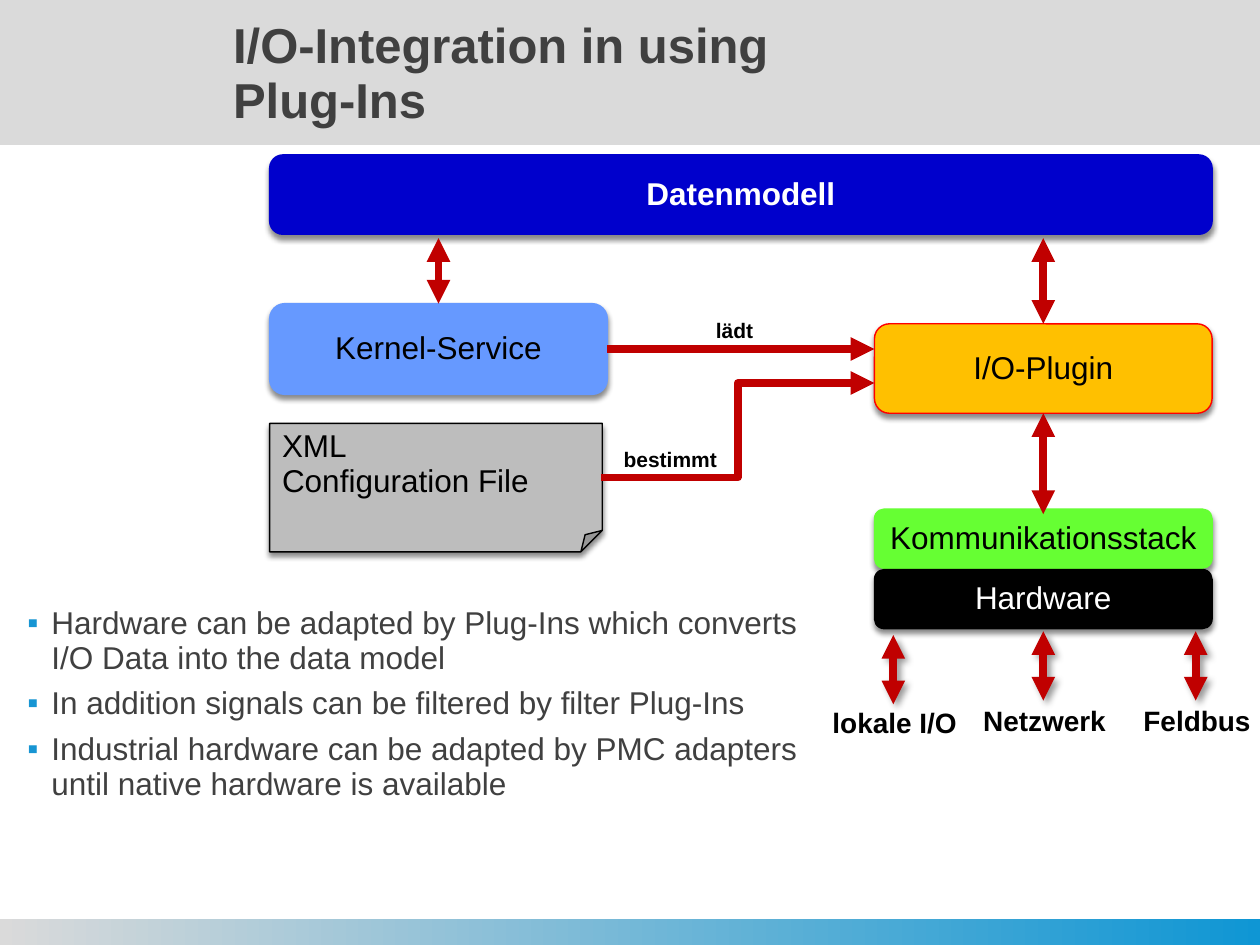
from dataclasses import dataclass

from lxml import etree
from pptx import Presentation
from pptx.dml.color import RGBColor
from pptx.enum.shapes import MSO_CONNECTOR, MSO_SHAPE
from pptx.enum.text import MSO_ANCHOR, MSO_AUTO_SIZE, PP_ALIGN
from pptx.oxml.ns import qn
from pptx.util import Emu, Pt

RECTANGLE = MSO_SHAPE.RECTANGLE
ROUNDED = MSO_SHAPE.ROUNDED_RECTANGLE
FOLDED = MSO_SHAPE.FOLDED_CORNER
STRAIGHT, ELBOW = MSO_CONNECTOR.STRAIGHT, MSO_CONNECTOR.ELBOW
TOP, MIDDLE = MSO_ANCHOR.TOP, MSO_ANCHOR.MIDDLE
LEFT, CENTER = PP_ALIGN.LEFT, PP_ALIGN.CENTER
FIT_SHAPE = MSO_AUTO_SIZE.SHAPE_TO_FIT_TEXT
TOP_SIDE, BOTTOM_SIDE, RIGHT_SIDE = 0, 2, 3
EMU_PER_PX = 9144


def px(value):
    return Emu(value * EMU_PER_PX)


@dataclass(frozen=True)
class Theme:
    font: str = "Arial"
    band: str = "DADADA"
    accent: str = "0F96D4"
    bullet: str = "1795D3"
    text: str = "404040"
    black: str = "000000"
    white: str = "FFFFFF"
    arrow: str = "C00000"
    model: str = "0000CC"
    service: str = "6699FF"
    plugin: str = "FFC000"
    plugin_edge: str = "FF0000"
    note: str = "BDBDBD"
    stack: str = "66FF33"
    title_size: int = 28
    body_size: int = 18
    label_size: int = 16
    caption_size: int = 12
    edge_width: float = 0.79
    arrow_width: float = 4.5
    line_spacing: float = 0.93
    box_shadow: tuple = (45, 3, 2.4, 90)
    arrow_shadow: tuple = (40, 4, 3, 45)


class SlideBuilder:
    def __init__(self, page, theme):
        self.page = page
        self.theme = theme

    def style_text(self, frame, text, size, color, bold=False, align=CENTER, anchor=TOP):
        frame.text = text
        frame.vertical_anchor = anchor
        for paragraph in frame.paragraphs:
            paragraph.alignment = align
            paragraph.line_spacing = self.theme.line_spacing
            for span in paragraph.runs:
                span.font.name = self.theme.font
                span.font.size = Pt(size)
                span.font.bold = bold
                span.font.color.rgb = RGBColor.from_string(color)

    def set_effect(self, shape, shadow=None):
        effects = etree.SubElement(shape._element.spPr, qn("a:effectLst"))
        if shadow:
            alpha, blur, distance, angle = shadow
            outer = etree.SubElement(
                effects, qn("a:outerShdw"), blurRad=str(Pt(blur)), dist=str(Pt(distance)),
                dir=str(angle * 60000), algn="ctr", rotWithShape="0")
            color = etree.SubElement(outer, qn("a:srgbClr"), val=self.theme.black)
            etree.SubElement(color, qn("a:alpha"), val=str(alpha * 1000))

    def band(self, top, height, gradient_end=None):
        shape = self.page.shapes.add_shape(RECTANGLE, 0, px(top), px(1000), px(height))
        if gradient_end:
            shape.fill.gradient()
            shape.fill.gradient_angle = 0
            for stop, color in zip(shape.fill.gradient_stops, (self.theme.band, gradient_end)):
                stop.color.rgb = RGBColor.from_string(color)
        else:
            shape.fill.solid()
            shape.fill.fore_color.rgb = RGBColor.from_string(self.theme.band)
        shape.line.fill.background()
        self.set_effect(shape)

    def block(self, bounds, text, fill, edge=None, color=None, bold=False,
              kind=ROUNDED, align=CENTER, anchor=MIDDLE):
        shape = self.page.shapes.add_shape(kind, *map(px, bounds))
        shape.fill.solid()
        shape.fill.fore_color.rgb = RGBColor.from_string(fill)
        shape.line.color.rgb = RGBColor.from_string(edge or fill)
        shape.line.width = Pt(self.theme.edge_width)
        self.set_effect(shape, self.theme.box_shadow)
        self.style_text(shape.text_frame, text, self.theme.body_size,
                        color or self.theme.black, bold, align, anchor)
        shape.text_frame.word_wrap = align == LEFT
        return shape

    def text_box(self, bounds, text, size, color, bold=False, align=CENTER, anchor=TOP):
        box = self.page.shapes.add_textbox(*map(px, bounds))
        frame = box.text_frame
        frame.word_wrap = True
        self.style_text(frame, text, size, color, bold, align, anchor)
        return frame

    def label(self, bounds, text, size):
        frame = self.text_box(bounds, text, size, self.theme.black, bold=True)
        frame.auto_size = FIT_SHAPE

    def bullets(self, bounds, items):
        frame = self.text_box(bounds, "\n".join(items), self.theme.body_size,
                              self.theme.text, align=LEFT)
        for index, paragraph in enumerate(frame.paragraphs):
            if index:
                paragraph.space_before = Pt(6)
            properties = paragraph._p.get_or_add_pPr()
            properties.set("marL", str(px(19)))
            properties.set("indent", str(px(-19)))
            color = etree.SubElement(properties, qn("a:buClr"))
            etree.SubElement(color, qn("a:srgbClr"), val=self.theme.bullet)
            etree.SubElement(properties, qn("a:buFont"), typeface=self.theme.font)
            etree.SubElement(properties, qn("a:buChar"), char="▪")

    def arrow(self, start, end, source=None, side=None, kind=STRAIGHT,
              both=True, shadow=None):
        line = self.page.shapes.add_connector(kind, *map(px, start + end))
        if source:
            line.begin_connect(source, side)
        line.line.color.rgb = RGBColor.from_string(self.theme.arrow)
        line.line.width = Pt(self.theme.arrow_width)
        outline = line.line._get_or_add_ln()
        for tag in ("a:headEnd", "a:tailEnd") if both else ("a:tailEnd",):
            etree.SubElement(outline, qn(tag), type="triangle")
        self.set_effect(line, shadow)


def main():
    theme = Theme()
    deck = Presentation()
    deck.slide_width, deck.slide_height = px(1000), px(750)
    page = deck.slides.add_slide(deck.slide_layouts[6])
    slide = SlideBuilder(page, theme)

    slide.band(0, 115)
    slide.band(729, 21, theme.accent)
    title = slide.text_box((177, 8, 661, 103), "I/O-Integration in using\vPlug-Ins",
                           theme.title_size, theme.text, True, LEFT, MIDDLE)
    title.margin_left = px(8)

    left, right, width = 214, 694, 268
    service_x, plugin_x = left + width // 2, right + width // 2
    slide.block((right, 404, width, 47), "Kommunikationsstack", theme.stack)
    slide.block((left, 123, right + width - left, 63), "Datenmodell", theme.model,
                color=theme.white, bold=True)
    plugin = slide.block((right, 257, width, 71), "I/O-Plugin", theme.plugin, theme.plugin_edge)
    slide.block((left, 336, 264, 102), "XML\nConfiguration File", theme.note, theme.black,
                kind=FOLDED, align=LEFT, anchor=TOP)
    service = slide.block((left, 241, width, 72), "Kernel-Service", theme.service)
    slide.block((right, 452, width, 47), "Hardware", theme.black, color=theme.white)

    ports = (("lokale I/O", 709, 504, (647, 557, 126, 35)),
             ("Netzwerk", plugin_x, 501, (767, 556, 124, 35)),
             ("Feldbus", 949, 501, (896, 556, 108, 35)))
    for name, x, top, bounds in ports:
        slide.arrow((x, top + 55), (x, top), shadow=theme.arrow_shadow)
        slide.label(bounds, name, theme.label_size)

    slide.arrow((service_x, 241), (service_x, 189), service, TOP_SIDE)
    slide.arrow((plugin_x, 257), (plugin_x, 189), plugin, TOP_SIDE)
    slide.arrow((plugin_x, 328), (plugin_x, 408), plugin, BOTTOM_SIDE)
    slide.arrow((left + width, 277), (right, 277), service, RIGHT_SIDE, both=False)
    slide.arrow((477, 379), (right, 304), kind=ELBOW, both=False)
    slide.label((481, 351, 102, 29), "bestimmt", theme.caption_size)
    slide.label((536, 249, 94, 29), "lädt", theme.caption_size)

    slide.bullets((12, 476, 646, 173), (
        "Hardware can be adapted by Plug-Ins which converts I/O Data into the data model",
        "In addition signals can be filtered by filter Plug-Ins",
        "Industrial hardware can be adapted by PMC adapters until native hardware is available"))
    deck.save("out.pptx")


if __name__ == "__main__":
    main()
